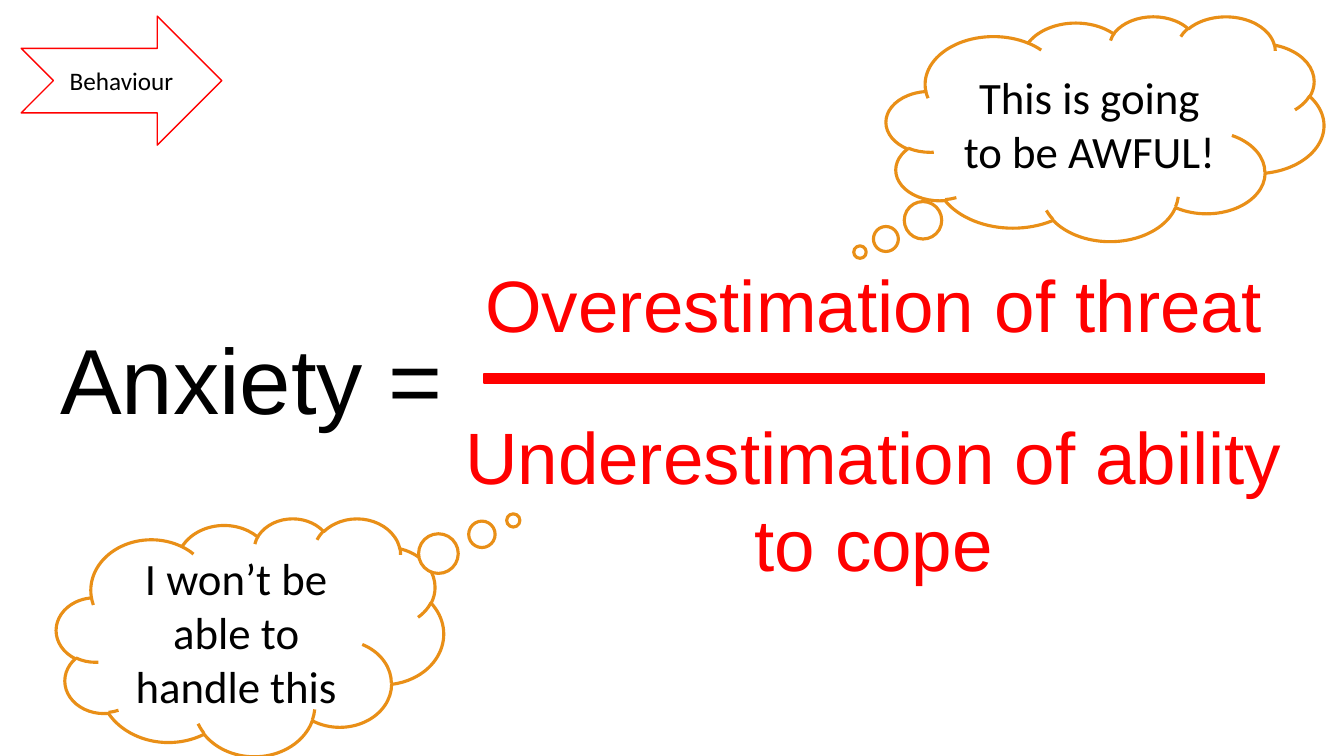
import dataclasses

import pptx
import pptx.dml.color
import pptx.enum.shapes
import pptx.enum.text
import pptx.util

Inches = pptx.util.Inches
Pt = pptx.util.Pt
RGB = pptx.dml.color.RGBColor
SHAPES = pptx.enum.shapes.MSO_SHAPE
ALIGN = pptx.enum.text.PP_ALIGN
ANCHOR = pptx.enum.text.MSO_ANCHOR
AUTO_SIZE = pptx.enum.text.MSO_AUTO_SIZE


@dataclasses.dataclass(frozen=True)
class Theme:
    red: RGB = RGB(0xFF, 0x00, 0x00)
    orange: RGB = RGB(0xE9, 0x8F, 0x17)
    black: RGB = RGB(0x00, 0x00, 0x00)
    white: RGB = RGB(0xFF, 0xFF, 0xFF)
    formula_font: str = "Arial"
    label_font: str = "Calibri"
    anxiety_size: int = 66
    term_size: int = 52
    thought_size: int = 32
    tag_size: int = 18


THEME = Theme()


def apply_format(target, values):
    for name, value in values.items():
        setattr(target, name, value)


def write(frame, lines, font, size, color, align, gap=0):
    """Fill the frame with one paragraph per line, gap points apart."""
    for index, line in enumerate(lines):
        paragraph = frame.paragraphs[0] if index == 0 else frame.add_paragraph()
        paragraph.alignment = align
        if index:
            paragraph.space_before = Pt(gap)
        run = paragraph.add_run()
        run.text = line
        apply_format(run.font, {"name": font, "size": Pt(size)})
        run.font.color.rgb = color


def add_formula_text(slide, box, lines, size, color, align, gap=0):
    frame = slide.shapes.add_textbox(*map(Inches, box)).text_frame
    apply_format(frame, {"word_wrap": True, "auto_size": AUTO_SIZE.SHAPE_TO_FIT_TEXT})
    write(frame, lines, THEME.formula_font, size, color, align, gap)


def add_outlined(slide, preset, box, fill, line, width, adjustments=()):
    shape = slide.shapes.add_shape(preset, *map(Inches, box))
    shape.shadow.inherit = False
    shape.fill.solid()
    shape.fill.fore_color.rgb = fill
    shape.line.color.rgb = line
    shape.line.width = Pt(width)
    for index, value in enumerate(adjustments):
        shape.adjustments[index] = value
    return shape


def add_label(shape, text, size, margins):
    frame = shape.text_frame
    sides = ("margin_left", "margin_top", "margin_right", "margin_bottom")
    apply_format(frame, dict(zip(sides, map(Inches, margins))))
    apply_format(frame, {"word_wrap": True, "vertical_anchor": ANCHOR.MIDDLE})
    write(frame, [text], THEME.label_font, size, THEME.black, ALIGN.CENTER)


def add_thought(slide, box, text, tail):
    """Draw a thought cloud whose bubbles lead to tail, relative to its centre."""
    cloud = add_outlined(slide, SHAPES.CLOUD_CALLOUT, box, THEME.white,
                         THEME.orange, 2.25, tail)
    add_label(cloud, text, THEME.thought_size, (0.13,) * 4)


def main():
    deck = pptx.Presentation()
    deck.slide_width, deck.slide_height = Inches(13.33), Inches(7.5)
    slide = deck.slides.add_slide(deck.slide_layouts[6])

    add_formula_text(slide, (4.5, 2.53, 8.33, 3.4),
                     ["Overestimation of threat", "Underestimation of ability to cope"],
                     THEME.term_size, THEME.red, ALIGN.CENTER, gap=46)
    add_outlined(slide, SHAPES.RECTANGLE, (4.8, 3.71, 7.74, 0.09),
                 THEME.red, THEME.red, 1)
    add_formula_text(slide, (0.5, 3.15, 4, 1.21), ["Anxiety ="],
                     THEME.anxiety_size, THEME.black, ALIGN.LEFT)

    add_thought(slide, (8.79, 0.16, 4.34, 2.23), "This is going to be AWFUL!",
                (-0.56, 0.55))
    add_thought(slide, (0.56, 5.14, 3.84, 2.36), "I won’t be able to handle this",
                (0.68, -0.49))

    behaviour = add_outlined(slide, SHAPES.NOTCHED_RIGHT_ARROW, (0.21, 0.16, 1.99, 1.28),
                             THEME.white, THEME.red, 1, (0.5, 0.5))
    add_label(behaviour, "Behaviour", THEME.tag_size, (0.1, 0.05, 0.1, 0.05))

    deck.save("out.pptx")


if __name__ == "__main__":
    main()
